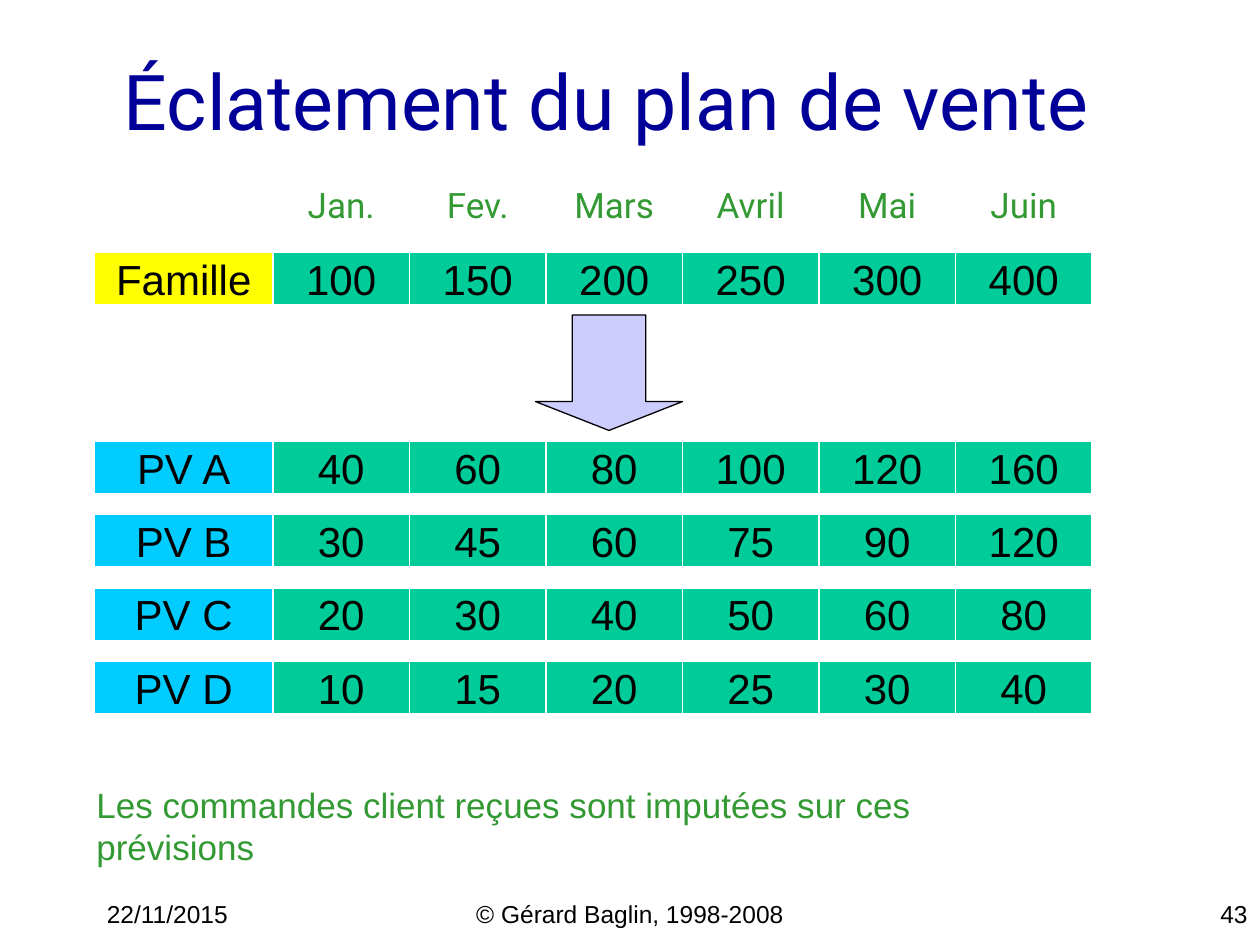
from pptx import Presentation
from pptx.dml.color import RGBColor
from pptx.enum.shapes import MSO_SHAPE
from pptx.enum.text import MSO_ANCHOR, PP_ALIGN
from pptx.util import Inches, Pt

TITLE = "Éclatement du plan de vente"
MONTHS = ["Jan.", "Fev.", "Mars", "Avril", "Mai", "Juin"]
FAMILY = ("Famille", [100, 150, 200, 250, 300, 400])
PRODUCTS = [
    ("PV A", [40, 60, 80, 100, 120, 160]),
    ("PV B", [30, 45, 60, 75, 90, 120]),
    ("PV C", [20, 30, 40, 50, 60, 80]),
    ("PV D", [10, 15, 20, 25, 30, 40]),
]
NOTE = "Les commandes client reçues sont imputées sur ces prévisions"
FOOTERS = [
    ("22/11/2015", 9, 25, PP_ALIGN.LEFT),
    ("© Gérard Baglin, 1998-2008", 41, 38, PP_ALIGN.CENTER),
    ("43", 95, 25, PP_ALIGN.RIGHT),
]
COLORS = {
    "title": "000099", "green": "339933", "black": "000000", "white": "FFFFFF",
    "family": "FFFF00", "product": "00CCFF", "value": "00CC99", "arrow": "CCCCFF",
}
UNIT = Inches(1) / 12
LEFT, LABEL_WIDTH, MONTH_WIDTH, ROW_HEIGHT = 9, 17, 13, 5
MONTH_TOP, FAMILY_TOP, PRODUCT_TOP, PRODUCT_STEP = 17, 24, 42, 7


def color(name):
    return RGBColor.from_string(COLORS[name])


def grid(*lengths):
    return [round(length * UNIT) for length in lengths]


def write(shape, text, size, font="Arial", ink="black", align=PP_ALIGN.LEFT):
    shape.text_frame.text = text
    para = shape.text_frame.paragraphs[0]
    para.alignment = align
    para.font.size = Pt(size)
    para.font.name = font
    para.font.color.rgb = color(ink)


def add_block(page, kind, area, fill, line):
    block = page.shapes.add_shape(kind, *grid(*area))
    block.shadow.inherit = False
    if fill:
        block.fill.solid()
        block.fill.fore_color.rgb = color(fill)
    else:
        block.fill.background()
    block.line.color.rgb = color(line)
    block.line.width = Pt(0.75)
    return block


def add_cell(page, left, top, width, text, fill, **style):
    cell = add_block(page, MSO_SHAPE.RECTANGLE, (left, top, width, ROW_HEIGHT), fill, "white")
    cell.text_frame.word_wrap = False
    cell.text_frame.vertical_anchor = MSO_ANCHOR.MIDDLE
    write(cell, text, align=PP_ALIGN.CENTER, **style)


def add_months(page, top, entries, fill, **style):
    for column, entry in enumerate(entries):
        left = LEFT + LABEL_WIDTH + column * MONTH_WIDTH
        add_cell(page, left, top, MONTH_WIDTH, str(entry), fill, **style)


def add_row(page, top, row, label_fill):
    label, values = row
    add_cell(page, LEFT, top, LABEL_WIDTH, label, label_fill, size=24)
    add_months(page, top, values, "value", size=24)


def add_text(page, area, text, size, **style):
    box = page.shapes.add_textbox(*grid(*area))
    box.text_frame.word_wrap = True
    write(box, text, size, **style)


def main():
    deck = Presentation()
    deck.slide_width, deck.slide_height = Inches(10), Inches(7.5)
    page = deck.slides.add_slide(deck.slide_layouts[5])

    title = page.shapes.title
    title.left, title.top, title.width, title.height = grid(3, 2, 102, 15)
    title.text_frame.vertical_anchor = MSO_ANCHOR.MIDDLE
    write(title, TITLE, 44, "Roboto", "title", PP_ALIGN.RIGHT)

    for text, left, width, align in FOOTERS:
        add_text(page, (left, 85, width, 3), text, 14, align=align)

    add_row(page, FAMILY_TOP, FAMILY, "family")
    for index, row in enumerate(PRODUCTS):
        add_row(page, PRODUCT_TOP + index * PRODUCT_STEP, row, "product")

    add_block(page, MSO_SHAPE.DOWN_ARROW, (51, 30, 14, 11), "arrow", "black").adjustments[1] = 0.25
    add_text(page, (8, 74, 95, 8), NOTE, 20, ink="green")
    add_months(page, MONTH_TOP, MONTHS, None, size=20, font="Roboto", ink="green")

    deck.save("out.pptx")


if __name__ == "__main__":
    main()
